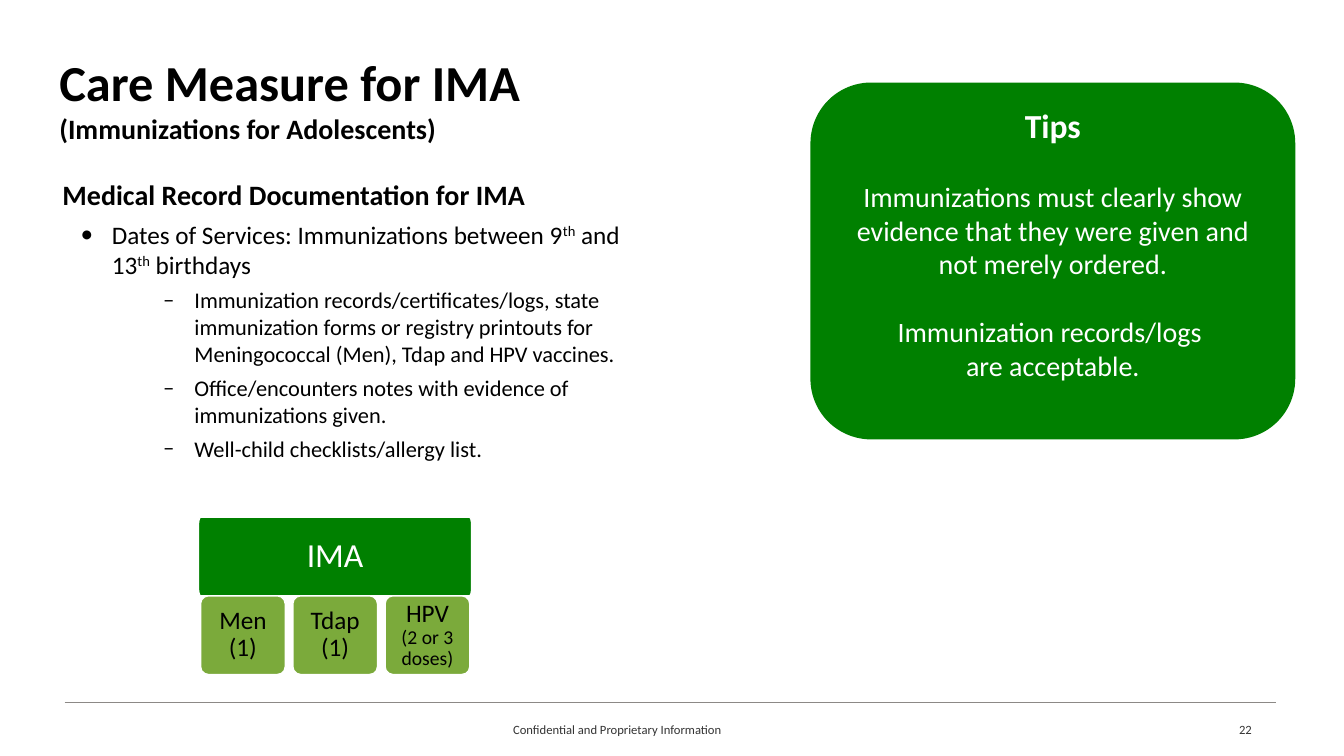
import math

from lxml import etree
from pptx import Presentation
from pptx import util as u
from pptx.dml.color import RGBColor
from pptx.enum import shapes, text
from pptx.oxml.ns import qn

Pt = u.Pt
COLORS = {"black": "000000", "white": "FFFFFF", "green": "008000",
          "light green": "7BAA3B", "rule": "8C8986", "footer": "333333"}

# A paragraph is (runs, format); a run is (text, format).
TITLE = [
    ([("Care Measure for IMA", {"size": 36, "bold": True})], {}),
    ([("(Immunizations for Adolescents)", {"size": 20, "bold": True})], {}),
]
DATES = {"size": 18}
ORDINAL = {"size": 18, "baseline": 30}
DATES_FORMAT = {"before": 6, "bullet": "•", "indent": 35.3, "hanging": 22.3}
RECORD_FORMAT = {"before": 5, "bullet": "‒", "indent": 94.3, "hanging": 22.3, "level": 2}
RECORDS = [
    "Immunization records/certificates/logs, state immunization forms "
    "or registry printouts for Meningococcal (Men), Tdap and HPV vaccines.",
    "Office/encounters notes with evidence of immunizations given.",
    "Well-child checklists/allergy list.",
]
BODY = [
    ([("Medical Record Documentation for IMA", {"size": 20, "bold": True})], {"spacing": 1.5}),
    ([("Dates of Services: Immunizations between 9", DATES), ("th", ORDINAL),
      (" and \v13", DATES), ("th", ORDINAL), (" birthdays", DATES)], DATES_FORMAT),
] + [([(record, {"size": 16})], RECORD_FORMAT) for record in RECORDS]

TIP = {"size": 20, "color": "white"}
TIPS = [
    ([("Tips", {"size": 24, "bold": True, "color": "white"})], {"align": "CENTER"}),
    ([("Immunizations must clearly show evidence that they were given "
       "and not merely ordered.", TIP)], {"align": "CENTER", "before": 24.4}),
    ([("Immunization records/logs \vare acceptable.", TIP)],
     {"align": "CENTER", "before": 24.4}),
]
MEASURE = [("IMA", {"size": 24, "color": "white"})]
VACCINES = [
    [("Men (1)", {"size": 18})],
    [("Tdap (1)", {"size": 18})],
    [("HPV ", {"size": 18}), ("(2 or 3 doses)", {"size": 14})],
]
FOOTER = {"size": 9, "color": "footer"}
LABEL_FORMAT = {"align": "CENTER", "spacing": 0.9}

MEASURE_BOX = (141.8, 369.4, 195.1, 56.2)
VACCINE_LEFT, VACCINE_STEP, VACCINE_WIDTH = 143.3, 65.9, 60.5


def rgb(name):
    return RGBColor.from_string(COLORS[name])


def format_paragraph(paragraph, align="LEFT", spacing=1.0, before=0, bullet=None,
                     indent=0, hanging=0, level=0):
    paragraph.level = level
    paragraph.alignment = getattr(text.PP_ALIGN, align)
    paragraph.line_spacing = spacing
    paragraph.space_before = Pt(before)
    if bullet:
        properties = paragraph._p.get_or_add_pPr()
        properties.set("marL", str(Pt(indent)))
        properties.set("indent", str(-Pt(hanging)))
        etree.SubElement(properties, qn("a:buFont"), typeface="Calibri")
        etree.SubElement(properties, qn("a:buChar"), char=bullet)


def add_run(paragraph, words, size, color="black", bold=False, baseline=0):
    for index, line in enumerate(words.split("\v")):
        if index:
            paragraph.add_line_break()
        run = paragraph.add_run()
        run.text = line
        run.font.name = "Calibri"
        run.font.size = Pt(size)
        run.font.bold = bold
        run.font.color.rgb = rgb(color)
        if baseline:
            run._r.get_or_add_rPr().set("baseline", str(baseline * 1000))


def write(shape, paragraphs, insets=(0, 0), anchor="TOP"):
    """Fill a shape with paragraphs; insets are (horizontal, vertical)."""
    frame = shape.text_frame
    frame.word_wrap = True
    frame.vertical_anchor = getattr(text.MSO_ANCHOR, anchor)
    frame.margin_left = frame.margin_right = Pt(insets[0])
    frame.margin_top = frame.margin_bottom = Pt(insets[1])
    for index, (runs, paragraph_format) in enumerate(paragraphs):
        paragraph = frame.add_paragraph() if index else frame.paragraphs[0]
        format_paragraph(paragraph, **paragraph_format)
        for words, run_format in runs:
            add_run(paragraph, words, **run_format)


def add_text(slide, box, paragraphs, **frame_format):
    write(slide.shapes.add_textbox(*map(Pt, box)), paragraphs, **frame_format)


def paint(shape, fill, outlined=True):
    shape.shadow.inherit = False
    shape.fill.solid()
    shape.fill.fore_color.rgb = rgb(fill)
    if outlined:
        shape.line.color.rgb = rgb("white")
        shape.line.width = Pt(1)
    else:
        shape.line.fill.background()


def add_round_rectangle(slide, box, radius, fill, outlined=True):
    """Radius is a share of the shorter side."""
    shape = slide.shapes.add_shape(shapes.MSO_SHAPE.ROUNDED_RECTANGLE, *map(Pt, box))
    shape.adjustments[0] = radius
    paint(shape, fill, outlined)
    return shape


def add_elliptic_rectangle(slide, box, radius_x, radius_y, fill):
    """Rectangle whose corners are quarter ellipses."""
    left, top, width, height = box
    centers = [(left + width - radius_x, top + height - radius_y),
               (left + radius_x, top + height - radius_y),
               (left + radius_x, top + radius_y),
               (left + width - radius_x, top + radius_y)]
    outline = []
    for corner, (x, y) in enumerate(centers):
        for step in range(7):
            angle = math.radians(90 * corner + 15 * step)
            outline.append((Pt(x + radius_x * math.cos(angle)),
                            Pt(y + radius_y * math.sin(angle))))
    builder = slide.shapes.build_freeform(*outline[0])
    builder.add_line_segments(outline[1:], close=True)
    shape = builder.convert_to_shape()
    paint(shape, fill)
    return shape


def add_footer(slide):
    rule = slide.shapes.add_connector(
        shapes.MSO_CONNECTOR.STRAIGHT, Pt(46.1), Pt(501.8), Pt(911.5), Pt(501.8))
    rule.line.color.rgb = rgb("rule")
    rule.line.width = Pt(0.5)
    etree.SubElement(rule._element.spPr, qn("a:effectLst"))
    add_text(slide, (366.5, 515.5, 275.8, 13.7),
             [([("Confidential and Proprietary Information", FOOTER)], {})])
    add_text(slide, (678.2, 515.5, 216, 13.7), [([("22", FOOTER)], {"align": "RIGHT"})])


def add_measure_chart(slide):
    header = add_elliptic_rectangle(slide, MEASURE_BOX, 1.6, 5.6, "green")
    write(header, [(MEASURE, LABEL_FORMAT)], insets=(11.5, 11.5), anchor="MIDDLE")
    top, height = MEASURE_BOX[1] + MEASURE_BOX[3], MEASURE_BOX[3]
    for index, runs in enumerate(VACCINES):
        box = (VACCINE_LEFT + index * VACCINE_STEP, top, VACCINE_WIDTH, height)
        card = add_round_rectangle(slide, box, 0.1, "light green")
        write(card, [(runs, LABEL_FORMAT)], insets=(6.3, 6.3), anchor="MIDDLE")


def main():
    presentation = Presentation()
    presentation.slide_width, presentation.slide_height = Pt(960), Pt(540)
    slide = presentation.slides.add_slide(presentation.slide_layouts[6])
    add_footer(slide)
    add_text(slide, (35.3, 33.1, 889.9, 74.9), TITLE, insets=(7.2, 3.6))
    add_text(slide, (44.6, 114.5, 435.6, 227.5), BODY)
    add_measure_chart(slide)
    tips = add_round_rectangle(slide, (578.9, 59, 346.3, 254.9), 0.17, "green", outlined=False)
    write(tips, TIPS, insets=(7.2, 3.6))
    presentation.save("out.pptx")


if __name__ == "__main__":
    main()
